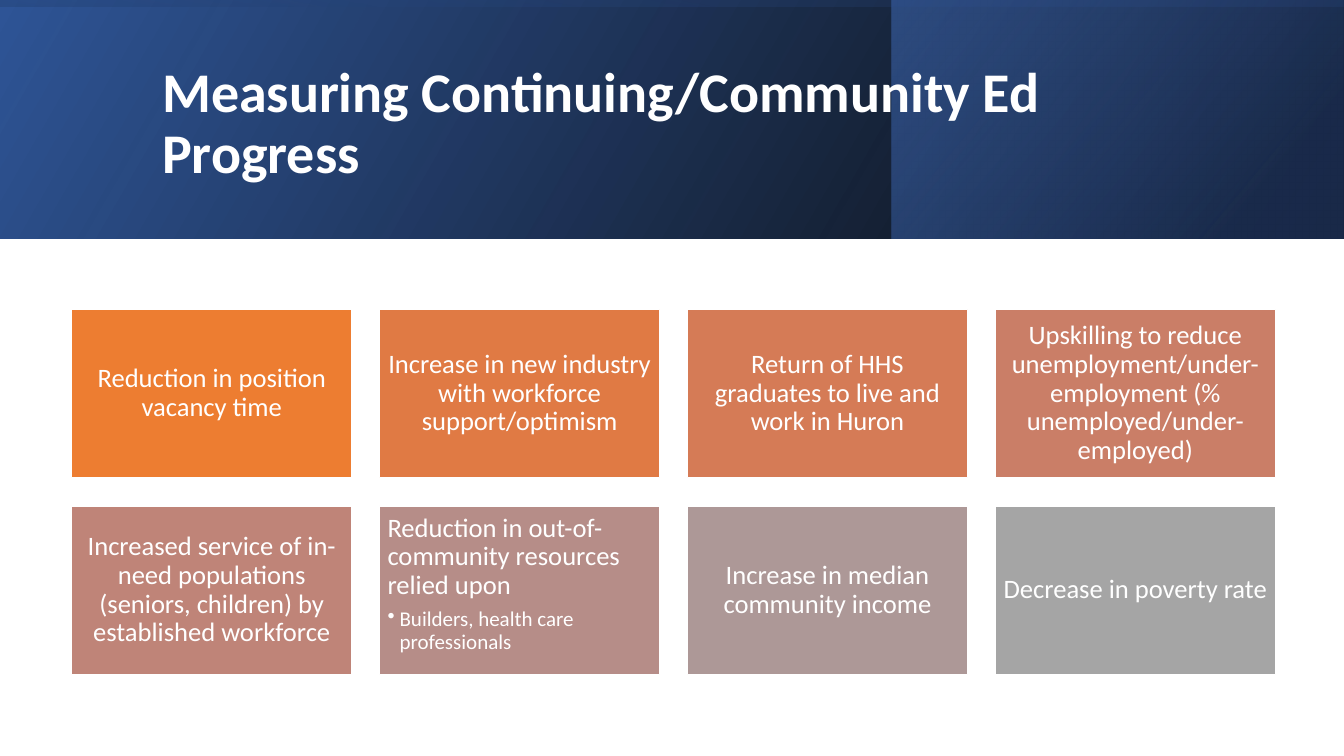
from dataclasses import dataclass

import pptx
import pptx.dml.color
import pptx.enum.shapes
import pptx.enum.text
import pptx.oxml
import pptx.oxml.ns
import pptx.util
from pptx.util import Inches

ANCHOR = pptx.enum.text.MSO_ANCHOR
ALIGN = pptx.enum.text.PP_ALIGN


@dataclass(frozen=True)
class Theme:
    font: str = "Calibri"
    white: str = "FFFFFF"
    black: str = "000000"
    navy: str = "203864"
    blue: str = "2F5597"
    sky: str = "4472C4"
    cards: tuple = ("ED7D31", "E07A44", "D57B56", "CA7E67",
                    "BF8478", "B68D88", "AD9897", "A5A5A5")
    title_size: int = 40
    card_size: int = 19
    detail_size: int = 15


@dataclass(frozen=True)
class Box:
    left: float
    top: float
    width: float
    height: float

    def lengths(self):
        return [Inches(n) for n in (self.left, self.top, self.width, self.height)]


THEME = Theme()
MEASURES = [
    ("Reduction in position vacancy time", None),
    ("Increase in new industry with workforce support/optimism", None),
    ("Return of HHS graduates to live and work in Huron", None),
    ("Upskilling to reduce unemployment/under-employment "
     "(% unemployed/under-employed)", None),
    ("Increased service of in-need populations (seniors, children) "
     "by established workforce", None),
    ("Reduction in out-of-community resources relied upon",
     "Builders, health care professionals"),
    ("Increase in median community income", None),
    ("Decrease in poverty rate", None),
]


def rgb(value):
    return pptx.dml.color.RGBColor.from_string(value)


def add_rectangle(page, box):
    shape = page.shapes.add_shape(
        pptx.enum.shapes.MSO_SHAPE.RECTANGLE, *box.lengths())
    shape.shadow.inherit = False
    return shape


def style_paragraph(para, size, bold=False):
    para.line_spacing = 0.9
    para.font.name = THEME.font
    para.font.size = pptx.util.Pt(size)
    para.font.bold = bold
    para.font.color.rgb = rgb(THEME.white)


def add_gradient(page, box, stops, angle, rotation=0):
    shape = add_rectangle(page, box)
    shape.rotation = rotation
    shape.line.fill.background()
    properties = shape._element.spPr
    frame = properties.find(pptx.oxml.ns.qn("a:xfrm"))
    frame.set("flipH", "1")
    stop_list = "".join(
        f'<a:gs pos="{place * 1000}"><a:srgbClr val="{color}">'
        f'<a:alpha val="{alpha * 1000}"/></a:srgbClr></a:gs>'
        for place, color, alpha in stops)
    gradient = pptx.oxml.parse_xml(
        f'<a:gradFill {pptx.oxml.ns.nsdecls("a")} rotWithShape="1">'
        f'<a:gsLst>{stop_list}</a:gsLst>'
        f'<a:lin ang="{angle * 60000}" scaled="0"/></a:gradFill>')
    properties.find(pptx.oxml.ns.qn("a:prstGeom")).addnext(gradient)


def add_banner(page, box, title):
    accent_width = 4.48
    accent = Box(box.left + box.width - accent_width - 0.01, box.top,
                 accent_width, box.height)
    offset = (box.width - box.height) / 2
    upright = Box(box.left + offset, box.top - offset, box.height, box.width)
    add_gradient(page, box, [(0, THEME.black, 96), (100, THEME.blue, 100)], 330)
    add_gradient(page, accent, [(19, THEME.navy, 68), (100, THEME.sky, 48)], 320)
    add_gradient(page, upright, [(23, THEME.blue, 16), (99, THEME.black, 45)],
                 350, rotation=270)

    heading = Box(box.left + 1.51, box.top + 0.38, 10.63, 1.72)
    frame = page.shapes.add_textbox(*heading.lengths()).text_frame
    frame.word_wrap = True
    frame.vertical_anchor = ANCHOR.MIDDLE
    frame.text = title
    style_paragraph(frame.paragraphs[0], THEME.title_size, bold=True)


def add_detail(frame, text):
    para = frame.add_paragraph()
    para.text = text
    para.level = 1
    para.alignment = ALIGN.LEFT
    style_paragraph(para, THEME.detail_size)
    properties = para._p.get_or_add_pPr()
    properties.set("marL", str(Inches(0.12)))
    properties.set("indent", str(Inches(-0.12)))
    bullet = pptx.oxml.parse_xml(
        f'<a:buChar {pptx.oxml.ns.nsdecls("a")} char="•"/>')
    properties.find(pptx.oxml.ns.qn("a:defRPr")).addprevious(bullet)


def add_card(page, box, color, text, detail):
    card = add_rectangle(page, box)
    card.fill.solid()
    card.fill.fore_color.rgb = rgb(color)
    card.line.color.rgb = rgb(THEME.white)
    card.line.width = pptx.util.Pt(1)
    frame = card.text_frame
    frame.word_wrap = True
    frame.margin_left = frame.margin_right = Inches(0.08)
    frame.margin_top = frame.margin_bottom = Inches(0.08)
    frame.vertical_anchor = ANCHOR.TOP if detail else ANCHOR.MIDDLE
    frame.text = text
    para = frame.paragraphs[0]
    para.alignment = ALIGN.LEFT if detail else ALIGN.CENTER
    style_paragraph(para, THEME.card_size)
    if detail:
        para.space_after = pptx.util.Pt(6)
        add_detail(frame, detail)


def add_card_grid(page, box, measures, columns=4):
    width, height = 2.78, 1.67
    rows = len(measures) // columns
    step_x = (box.width - width) / (columns - 1)
    step_y = (box.height - height) / (rows - 1)
    for index, (text, detail) in enumerate(measures):
        row, column = divmod(index, columns)
        place = Box(box.left + column * step_x, box.top + row * step_y,
                    width, height)
        add_card(page, place, THEME.cards[index], text, detail)


def main():
    deck = pptx.Presentation()
    deck.slide_width = Inches(13.33)
    deck.slide_height = Inches(7.5)
    page = deck.slides.add_slide(deck.slide_layouts[6])
    add_banner(page, Box(0, 0, 13.33, 2.37),
               "Measuring Continuing/Community Ed Progress")
    add_card_grid(page, Box(0.71, 3.07, 11.94, 3.62), MEASURES)
    deck.save("out.pptx")


if __name__ == "__main__":
    main()
